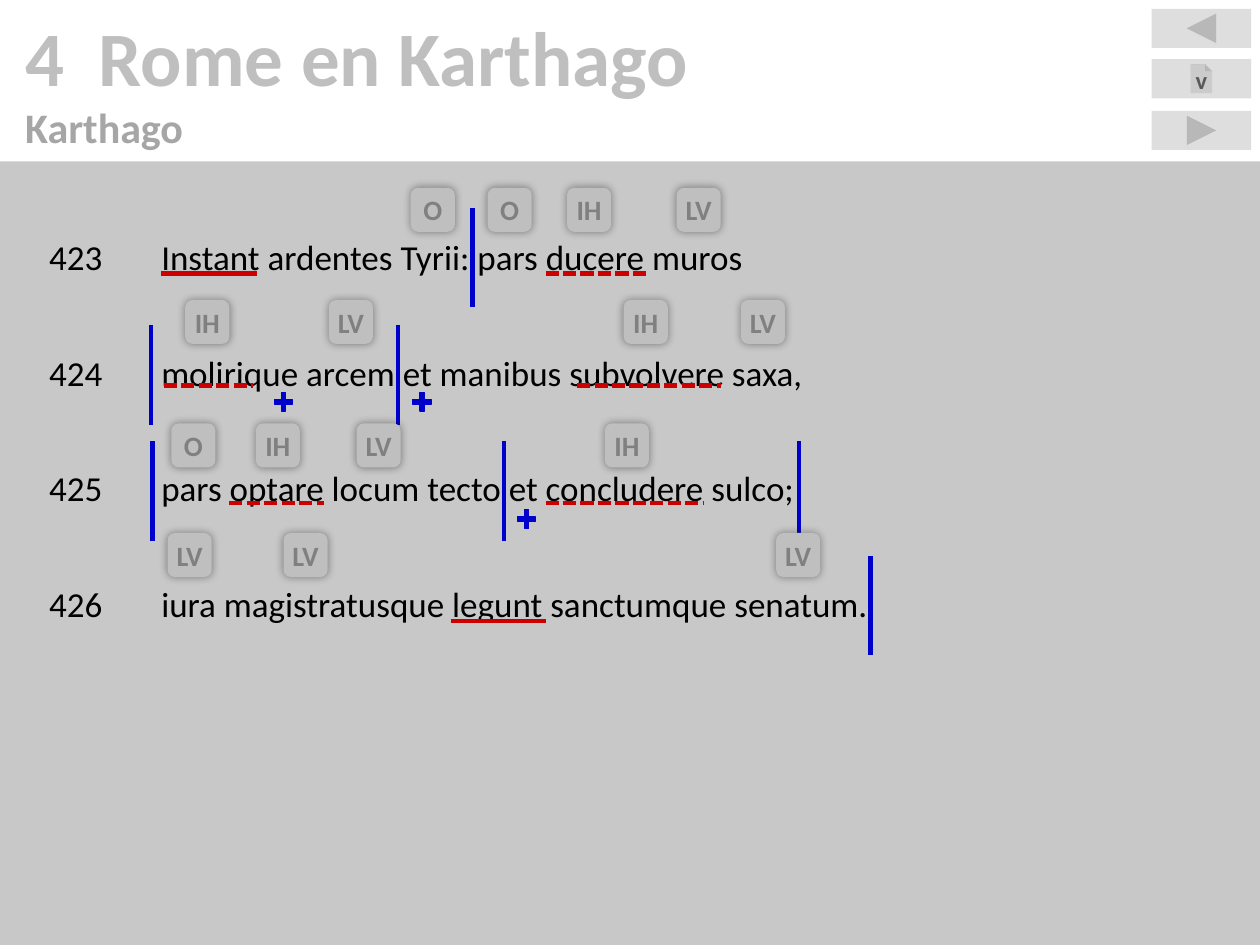
from lxml.etree import SubElement
from pptx import Presentation
from pptx.dml.color import RGBColor
from pptx.enum.dml import MSO_LINE
from pptx.enum.shapes import MSO_CONNECTOR, MSO_SHAPE
from pptx.enum.text import MSO_ANCHOR, PP_ALIGN
from pptx.oxml.ns import qn
from pptx.util import Inches, Pt

SILVER = RGBColor(0xBF, 0xBF, 0xBF)
MID_GREY = RGBColor(0xA6, 0xA6, 0xA6)
GREY = RGBColor(0x80, 0x80, 0x80)
DARK_GREY = RGBColor(0x59, 0x59, 0x59)
BLACK = RGBColor(0, 0, 0)
BLUE = RGBColor(0, 0, 0xCC)
RED = RGBColor(0xCC, 0, 0)

BAR_HEIGHT = 0.79
BADGE_SIZE = 0.35
PLUS_SIZE = 0.2

verses = [
    {
        "text": "423\tInstant ardentes Tyrii: pars ducere muros",
        "bar_top": 1.65, "bars": [3.75],
        "underline_y": 2.17, "underlines": [(1.28, 2.04, MSO_LINE.SOLID), (4.33, 5.13, MSO_LINE.SQUARE_DOT)],
        "badge_top": 1.49, "badges": [("O", 3.26), ("O", 3.87), ("IH", 4.5), ("LV", 5.37)],
        "plus_top": 0, "pluses": [],
    },
    {
        "text": "424\tmolirique arcem et manibus subvolvere saxa,",
        "bar_top": 2.58, "bars": [1.2, 3.16],
        "underline_y": 3.06, "underlines": [(1.3, 2.01, MSO_LINE.SQUARE_DOT), (4.58, 5.72, MSO_LINE.SQUARE_DOT)],
        "badge_top": 2.38, "badges": [("IH", 1.47), ("LV", 2.61), ("IH", 4.95), ("LV", 5.88)],
        "plus_top": 3.09, "pluses": [2.15, 3.25],
    },
    {
        "text": "425\tpars optare locum tecto et concludere sulco;",
        "bar_top": 3.5, "bars": [1.21, 4, 6.34],
        "underline_y": 3.99, "underlines": [(1.82, 2.57, MSO_LINE.SQUARE_DOT), (4.33, 5.59, MSO_LINE.SQUARE_DOT)],
        "badge_top": 3.36, "badges": [("O", 1.36), ("IH", 2.03), ("LV", 2.83), ("IH", 4.8)],
        "plus_top": 4.02, "pluses": [4.08],
    },
    {
        "text": "426\tiura magistratusque legunt sanctumque senatum.",
        "bar_top": 4.41, "bars": [6.91],
        "underline_y": 4.93, "underlines": [(3.58, 4.33, MSO_LINE.SOLID)],
        "badge_top": 4.23, "badges": [("LV", 1.33), ("LV", 2.25), ("LV", 6.16)],
        "plus_top": 0, "pluses": [],
    },
]


def write(paragraph, text, size, color, bold, **paragraph_format):
    run = paragraph.add_run()
    run.text = text
    run.font.color.rgb = color
    for key, value in {"name": "Calibri", "size": Pt(size), "bold": bold}.items():
        setattr(run.font, key, value)
    for key, value in paragraph_format.items():
        setattr(paragraph, key, value)


def add_filled(kind, left, top, width, height, color, opacity=100):
    shape = slide.shapes.add_shape(kind, Inches(left), Inches(top), Inches(width), Inches(height))
    shape.shadow.inherit = False
    shape.fill.solid()
    shape.fill.fore_color.rgb = color
    shape.line.fill.background()
    if opacity < 100:
        fill_color = shape.fill._xPr.find(qn("a:solidFill"))[0]
        SubElement(fill_color, qn("a:alpha"), val=str(opacity * 1000))
    return shape


presentation = Presentation()
presentation.slide_width = Inches(10)
presentation.slide_height = Inches(7.5)
slide = presentation.slides.add_slide(presentation.slide_layouts[6])

heading = slide.shapes.add_textbox(0, 0, Inches(10), Inches(1.28)).text_frame
heading_format = {"word_wrap": True, "vertical_anchor": MSO_ANCHOR.MIDDLE}
heading_format |= {f"margin_{side}": Inches(0.2) for side in ("left", "top", "right", "bottom")}
for key, value in heading_format.items():
    setattr(heading, key, value)
write(heading.paragraphs[0], "4  Rome en Karthago", 44, SILVER, True)
write(heading.add_paragraph(), "Karthago", 24, MID_GREY, True)

passage = add_filled(MSO_SHAPE.RECTANGLE, 0, 1.28, 10, 6.22, SILVER, 85).text_frame
passage_format = {
    "word_wrap": True,
    "vertical_anchor": MSO_ANCHOR.TOP,
    "margin_left": Inches(0.39),
    "margin_right": Inches(0.39),
    "margin_top": Inches(0.59),
    "margin_bottom": Inches(0.59),
}
for key, value in passage_format.items():
    setattr(passage, key, value)
for index, verse in enumerate(verses):
    line = passage.add_paragraph() if index else passage.paragraphs[0]
    tabs = SubElement(line._p.get_or_add_pPr(), qn("a:tabLst"))
    SubElement(tabs, qn("a:tab"), pos=str(Inches(0.89)), algn="l")
    write(line, verse["text"], 20, BLACK, False, alignment=PP_ALIGN.LEFT, space_after=Pt(42))

navigation = [
    (MSO_SHAPE.ACTION_BUTTON_BACK_OR_PREVIOUS, 0.07, ""),
    (MSO_SHAPE.ACTION_BUTTON_DOCUMENT, 0.47, "v"),
    (MSO_SHAPE.ACTION_BUTTON_FORWARD_OR_NEXT, 0.88, ""),
]
for kind, top, label in navigation:
    button = add_filled(kind, 9.14, top, 0.79, 0.31, SILVER, 50)
    if label:
        button.text_frame.vertical_anchor = MSO_ANCHOR.TOP
        write(button.text_frame.paragraphs[0], label, 14, DARK_GREY, True, alignment=PP_ALIGN.CENTER)

for verse in verses:
    bar_top, underline_y = verse["bar_top"], verse["underline_y"]
    strokes = [(x, bar_top, x, bar_top + BAR_HEIGHT, BLUE, MSO_LINE.SOLID) for x in verse["bars"]]
    strokes += [(start, underline_y, end, underline_y, RED, dash) for start, end, dash in verse["underlines"]]
    for x1, y1, x2, y2, color, dash in strokes:
        stroke = slide.shapes.add_connector(
            MSO_CONNECTOR.STRAIGHT, Inches(x1), Inches(y1), Inches(x2), Inches(y2)
        )
        stroke.line.color.rgb = color
        for key, value in {"width": Pt(2.5), "dash_style": dash}.items():
            setattr(stroke.line, key, value)
        SubElement(stroke._element.spPr, qn("a:effectLst"))

    for left in verse["pluses"]:
        plus = add_filled(MSO_SHAPE.MATH_PLUS, left, verse["plus_top"], PLUS_SIZE, PLUS_SIZE, BLUE)
        plus.adjustments[0] = 0.17
        plus.line.color.rgb = BLUE
        plus.line.width = Pt(0)

badge_format = {"word_wrap": False, "vertical_anchor": MSO_ANCHOR.MIDDLE}
badge_format |= {f"margin_{side}": 0 for side in ("left", "top", "right", "bottom")}
for verse in verses:
    for label, left in verse["badges"]:
        badge = add_filled(
            MSO_SHAPE.ROUNDED_RECTANGLE, left, verse["badge_top"], BADGE_SIZE, BADGE_SIZE, SILVER
        )
        effects = badge._element.spPr.find(qn("a:effectLst"))
        glow = SubElement(effects, qn("a:outerShdw"), blurRad=str(Pt(5)), dist="0", dir="0", algn="ctr")
        glow_color = SubElement(glow, qn("a:srgbClr"), val=str(BLACK))
        SubElement(glow_color, qn("a:alpha"), val="40000")
        for key, value in badge_format.items():
            setattr(badge.text_frame, key, value)
        write(badge.text_frame.paragraphs[0], label, 16, GREY, True, alignment=PP_ALIGN.CENTER)

presentation.save("out.pptx")
